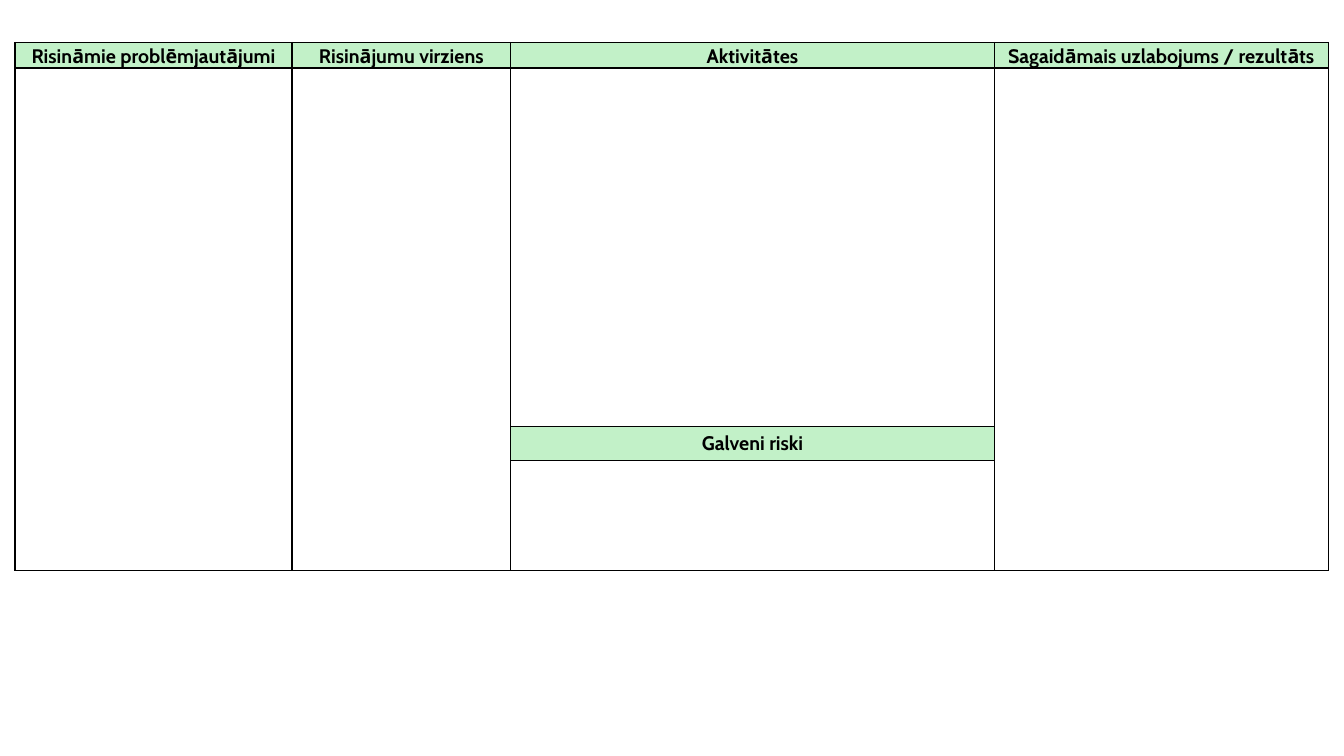
from lxml import etree
from pptx import Presentation, util as u
from pptx.dml.color import RGBColor
from pptx.enum import text
from pptx.oxml import ns

COLORS = {"heading": "C2F1C8", "ink": "000000"}
COLUMN_WIDTHS = [6.98, 5.51, 12.19, 8.41]
ROW_HEIGHTS = [0.64, 9.04, 0.86, 2.77]
HEADINGS = ["Risināmie problēmjautājumi", "Risinājumu virziens", "Aktivitātes",
            "Sagaidāmais uzlabojums / rezultāts"]


def add_borders(cell):
    properties = cell._tc.get_or_add_tcPr()
    for side in ("lnL", "lnR", "lnT", "lnB"):
        line = etree.SubElement(properties, ns.qn(f"a:{side}"), w=str(u.Pt(1)))
        fill = etree.SubElement(line, ns.qn("a:solidFill"))
        etree.SubElement(fill, ns.qn("a:srgbClr"), val=COLORS["ink"])


def write_heading(cell, words):
    cell.fill.solid()
    cell.fill.fore_color.rgb = RGBColor.from_string(COLORS["heading"])
    cell.text = words
    paragraph = cell.text_frame.paragraphs[0]
    paragraph.alignment = text.PP_ALIGN.CENTER
    paragraph.font.name = "Cabin"
    paragraph.font.size = u.Pt(14)
    paragraph.font.bold = True
    paragraph.font.color.rgb = RGBColor.from_string(COLORS["ink"])
    return paragraph


prs = Presentation()
prs.slide_width, prs.slide_height = u.Cm(33.87), u.Cm(19.05)
slide = prs.slides.add_slide(prs.slide_layouts[6])

# Planning grid
plan = slide.shapes.add_table(
    len(ROW_HEIGHTS), len(COLUMN_WIDTHS), u.Cm(0.38), u.Cm(1.07),
    u.Cm(sum(COLUMN_WIDTHS)), u.Cm(sum(ROW_HEIGHTS))).table
plan.first_row = plan.horz_banding = False
for column, width in zip(plan.columns, COLUMN_WIDTHS):
    column.width = u.Cm(width)
for row, height in zip(plan.rows, ROW_HEIGHTS):
    row.height = u.Cm(height)
for cell in plan.iter_cells():
    add_borders(cell)
    cell.fill.background()

# Tall answer areas beside the activities
for column in (0, 1, 3):
    plan.cell(1, column).merge(plan.cell(3, column))

# Column headings
for column, words in enumerate(HEADINGS):
    cell = plan.cell(0, column)
    cell.margin_left = cell.margin_right = u.Cm(0.18)
    cell.margin_top = cell.margin_bottom = 0
    cell.vertical_anchor = text.MSO_ANCHOR.MIDDLE
    write_heading(cell, words).line_spacing = 1.07

# Risks heading
write_heading(plan.cell(2, 2), "Galveni riski")

prs.save("out.pptx")
